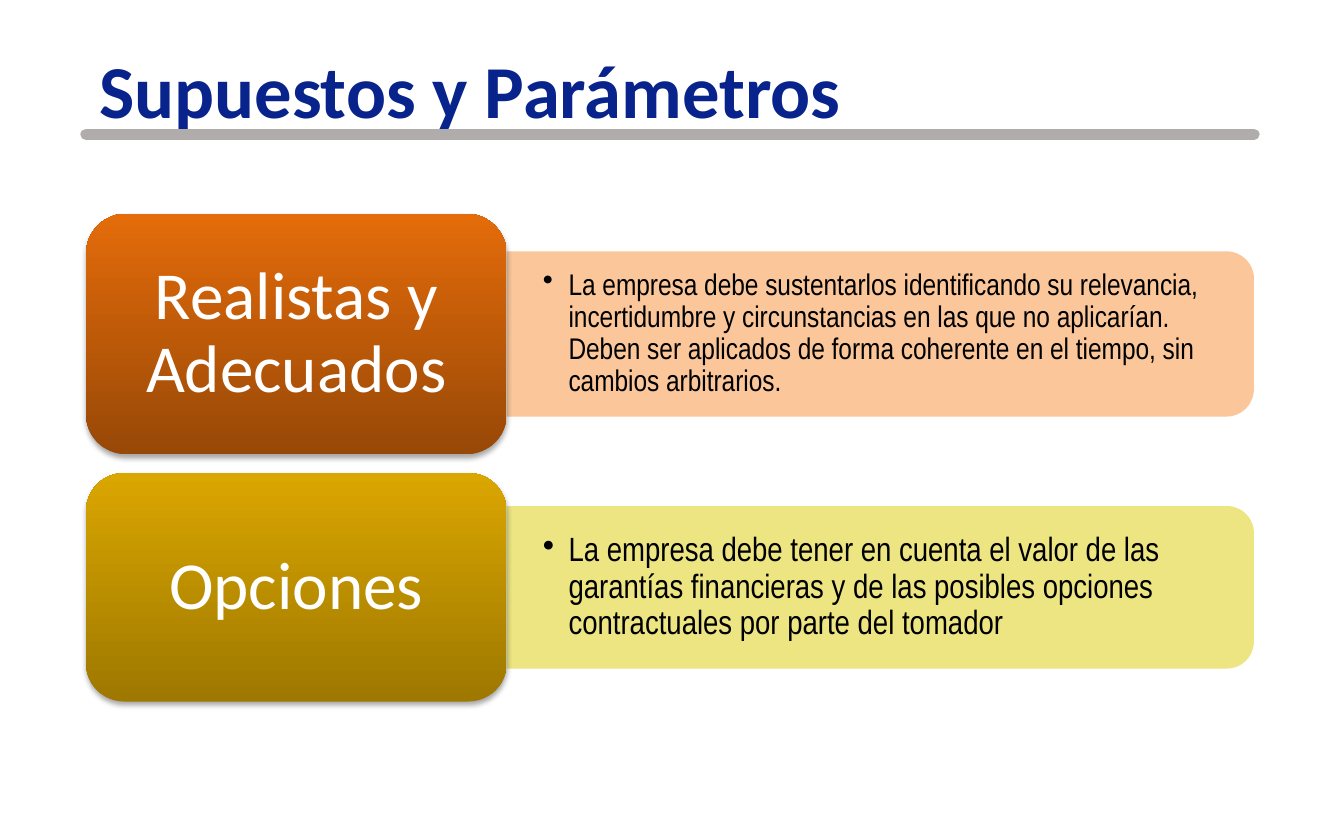
from lxml import etree
from pptx import Presentation
from pptx.dml.color import RGBColor
from pptx.enum.shapes import MSO_CONNECTOR, MSO_SHAPE
from pptx.enum.text import MSO_ANCHOR, PP_ALIGN
from pptx.oxml import parse_xml
from pptx.oxml.ns import nsdecls, qn
from pptx.util import Inches, Pt

COLORS = {
    "title": "08238B", "rule": "B0ACAB", "text": "000000", "card_text": "FFFFFF",
    "orange_dark": "984807", "orange": "E46C0A", "orange_pale": "FAC090",
    "gold_dark": "9E7800", "gold": "DAA600", "gold_pale": "EBE375",
}
LEFT, RIGHT, CARD_WIDTH = 0.64, 9.33, 3.13
PANEL_LEFT = LEFT + CARD_WIDTH
PANEL_WIDTH = RIGHT - PANEL_LEFT


def color(name):
    return RGBColor.from_string(COLORS[name])


def write(shape, text, font, size, color_name, insets, anchor, align):
    """Fill a shape with one formatted paragraph and return that paragraph."""
    frame = shape.text_frame
    frame.text = text
    frame.word_wrap = True
    frame.vertical_anchor = anchor
    frame.margin_left = frame.margin_right = Inches(insets[0])
    frame.margin_top = frame.margin_bottom = Inches(insets[1])
    para = frame.paragraphs[0]
    para.alignment = align
    span = para.runs[0]
    span.font.name = font
    span.font.size = Pt(size)
    span.font.color.rgb = color(color_name)
    return para


deck = Presentation()
deck.slide_width, deck.slide_height = Inches(10), Inches(6.25)
page = deck.slides.add_slide(deck.slide_layouts[6])

title = page.shapes.add_textbox(Inches(LEFT), Inches(0.28), Inches(8.7), Inches(0.77))
para = write(title, "Supuestos y Parámetros", "Calibri", 40, "title",
             (0.1, 0.05), MSO_ANCHOR.TOP, PP_ALIGN.LEFT)
para.runs[0].font.bold = True

rule = page.shapes.add_connector(
    MSO_CONNECTOR.STRAIGHT, Inches(LEFT), Inches(1), Inches(RIGHT), Inches(1))
rule.line.color.rgb = color("rule")
rule.line.width = Pt(6)
rule.line._get_or_add_ln().set("cap", "rnd")
etree.SubElement(rule._element.spPr, qn("a:effectLst"))

# heading, explanation, text size, card top, card height, panel height, colour family
rows = [
    ("Realistas y Adecuados",
     "La empresa debe sustentarlos identificando su relevancia, incertidumbre y "
     "circunstancias en las que no aplicarían. Deben ser aplicados de forma coherente "
     "en el tiempo, sin cambios arbitrarios.",
     16, 1.59, 1.79, 1.23, "orange"),
    ("Opciones",
     "La empresa debe tener en cuenta el valor de las garantías financieras y de las "
     "posibles opciones contractuales por parte del tomador",
     18, 3.52, 1.7, 1.21, "gold"),
]

for heading, explanation, size, top, height, panel_height, family in rows:
    middle = top + height / 2

    # The panel stands upright and is turned so its round corners face right
    panel = page.shapes.add_shape(
        MSO_SHAPE.ROUND_2_SAME_RECTANGLE,
        Inches(PANEL_LEFT + (PANEL_WIDTH - panel_height) / 2),
        Inches(middle - PANEL_WIDTH / 2), Inches(panel_height), Inches(PANEL_WIDTH))
    panel.rotation = 90
    panel.shadow.inherit = False
    panel.line.fill.background()
    panel.fill.solid()
    panel.fill.fore_color.rgb = color(family + "_pale")
    tint = panel._element.spPr.find(".//" + qn("a:srgbClr"))
    etree.SubElement(tint, qn("a:alpha"), val="90000")

    text_height = panel_height - 0.12
    body = page.shapes.add_textbox(
        Inches(PANEL_LEFT), Inches(middle - text_height / 2),
        Inches(PANEL_WIDTH - 0.05), Inches(text_height))
    para = write(body, explanation, "Arial Narrow", size, "text",
                 (0.27, 0.14), MSO_ANCHOR.MIDDLE, PP_ALIGN.LEFT)
    para.line_spacing = 0.9
    properties = para._p.get_or_add_pPr()
    properties.set("marL", str(Inches(0.19)))
    properties.set("indent", str(-Inches(0.19)))
    etree.SubElement(properties, qn("a:buChar"), char="•")

    card = page.shapes.add_shape(
        MSO_SHAPE.ROUNDED_RECTANGLE,
        Inches(LEFT), Inches(top), Inches(CARD_WIDTH), Inches(height))
    card.line.fill.background()
    card.fill.gradient()
    card.fill.gradient_angle = 90
    for stop, name, position in zip(card.fill.gradient_stops, (family + "_dark", family), (0, 1)):
        stop.color.rgb = color(name)
        stop.position = position
    card.shadow.inherit = False
    card._element.spPr.find(qn("a:effectLst")).append(parse_xml(
        f'<a:outerShdw {nsdecls("a")} blurRad="{Pt(3.1)}" dist="{Pt(1.8)}" dir="5400000" '
        'rotWithShape="0"><a:srgbClr val="000000"><a:alpha val="35000"/></a:srgbClr>'
        '</a:outerShdw>'))
    para = write(card, heading, "Calibri", 36, "card_text",
                 (0.15, 0.07), MSO_ANCHOR.MIDDLE, PP_ALIGN.CENTER)
    para.line_spacing = 0.9

deck.save("out.pptx")
